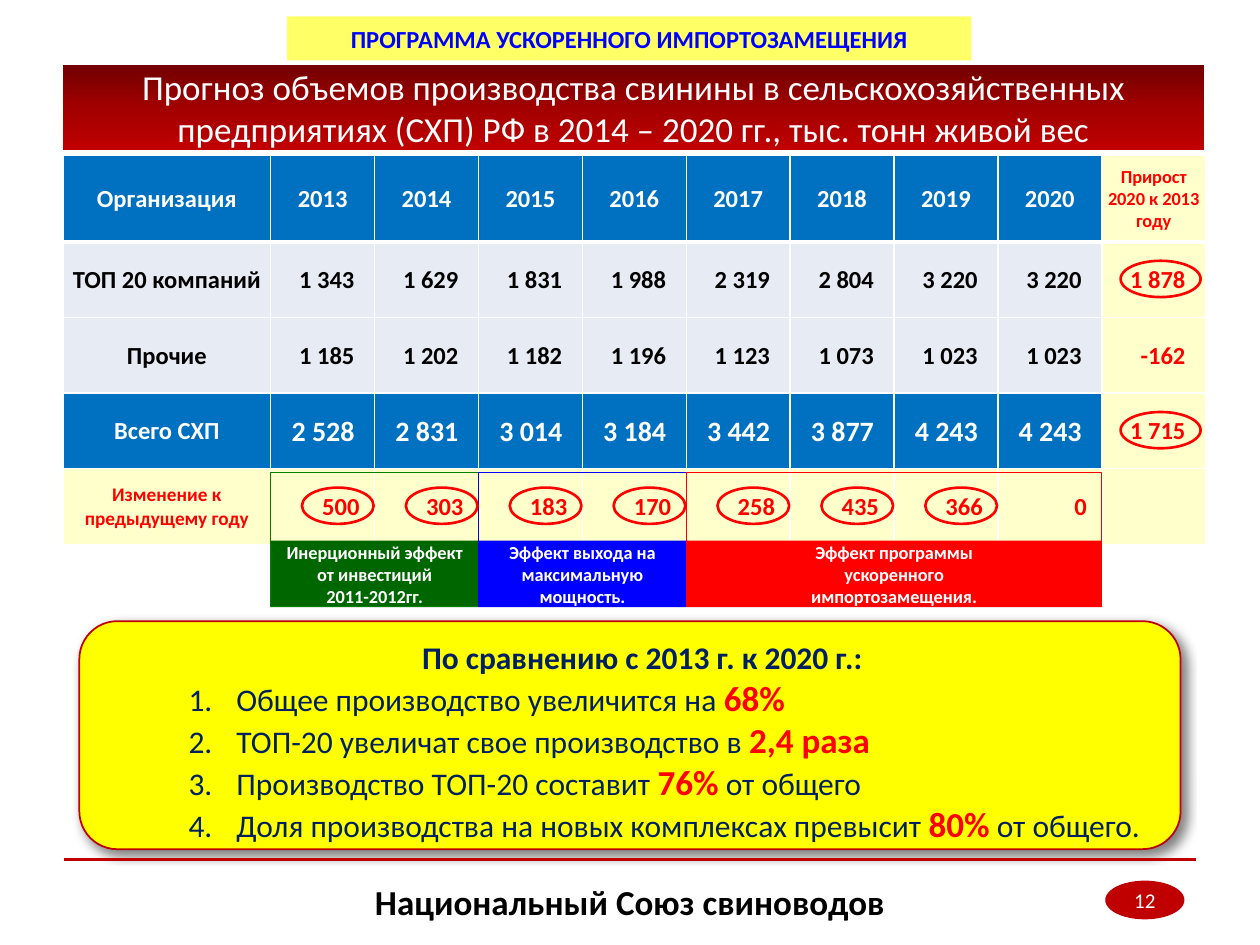
import copy
import dataclasses

import pptx
import pptx.dml.color
import pptx.enum.shapes
import pptx.enum.text
import pptx.oxml
import pptx.oxml.ns
import pptx.util

SLIDE_W, SLIDE_H = pptx.util.Inches(10), pptx.util.Inches(7.5)
SHAPE = pptx.enum.shapes.MSO_SHAPE
ALIGN = pptx.enum.text.PP_ALIGN
MIDDLE = pptx.enum.text.MSO_ANCHOR.MIDDLE
TOP = pptx.enum.text.MSO_ANCHOR.TOP
DRAWING_NS = pptx.oxml.ns.nsdecls("a")

WHITE, BLACK, RED, DARK_RED = "FFFFFF", "000000", "FF0000", "C00000"
BLUE, PALE_BLUE, CREAM, NAVY = "0070C0", "E7EBF4", "FFFFCC", "002060"

# The table grid: a label column of two units and nine columns of one unit.
COLUMN_UNITS = [2] + [1] * 9
ROW_UNITS = [1.15, 1, 1, 1, 1]
GRID_COLS, GRID_ROWS = sum(COLUMN_UNITS), sum(ROW_UNITS)

HEADER = ["Организация", "2013", "2014", "2015", "2016", "2017", "2018",
          "2019", "2020", "Прирост 2020 к 2013 году"]
VOLUMES = [
    ["ТОП 20 компаний", "1 343", "1 629", "1 831", "1 988", "2 319",
     "2 804", "3 220", "3 220", "1 878"],
    ["Прочие", "1 185", "1 202", "1 182", "1 196", "1 123",
     "1 073", "1 023", "1 023", "-162"],
    ["Всего СХП", "2 528", "2 831", "3 014", "3 184", "3 442",
     "3 877", "4 243", "4 243", "1 715"],
    ["Изменение к предыдущему году", "500", "303", "183", "170", "258",
     "435", "366", "0", ""],
]
# First grid column, width in columns, band colour, frame colour, label.
EFFECTS = [
    (2, 2, "006600", "008000", "Инерционный эффект\nот инвестиций\n2011-2012гг."),
    (4, 2, "0000FF", "0000FF", "Эффект выхода на максимальную мощность."),
    (6, 4, RED, RED, "Эффект программы\nускоренного\nимпортозамещения."),
]
CONCLUSIONS = [
    ("Общее производство увеличится на ", "68%", ""),
    ("ТОП-20 увеличат свое производство в ", "2,4 раза", ""),
    ("Производство ТОП-20 составит ", "76%", " от общего"),
    ("Доля производства на новых комплексах превысит ", "80%", " от общего."),
]


@dataclasses.dataclass
class Box:
    x: float
    y: float
    w: float
    h: float

    def inner(self, x, y, w, h, cols=1, rows=1):
        """Inner box measured in columns and rows of this one."""
        return Box(self.x + self.w * x / cols, self.y + self.h * y / rows,
                   self.w * w / cols, self.h * h / rows)

    def emu(self):
        return [round(v) for v in (self.x, self.y, self.w, self.h)]


def percent(x, y, w, h):
    return Box(0, 0, SLIDE_W, SLIDE_H).inner(x, y, w, h, 100, 100)


def color(hex_value):
    return pptx.dml.color.RGBColor.from_string(hex_value)


def paint(run, size, hex_value, bold=False):
    run.font.name = "Calibri"
    run.font.size = pptx.util.Pt(size)
    run.font.bold = bold
    run.font.color.rgb = color(hex_value)


def write(frame, text, size, hex_value, bold=False, align=ALIGN.CENTER):
    frame.text = text
    for paragraph in frame.paragraphs:
        paragraph.alignment = align
        for run in paragraph.runs:
            paint(run, size, hex_value, bold)


def add_shape(slide, kind, box, fill=None, line=None, width=1):
    shape = slide.shapes.add_shape(kind, *box.emu())
    shape.shadow.inherit = False
    if fill:
        shape.fill.solid()
        shape.fill.fore_color.rgb = color(fill)
    else:
        shape.fill.background()
    if line:
        shape.line.color.rgb = color(line)
        shape.line.width = pptx.util.Pt(width)
    else:
        shape.line.fill.background()
    shape.text_frame.word_wrap = True
    shape.text_frame.vertical_anchor = MIDDLE
    return shape


def clear_margins(frame):
    frame.margin_left = frame.margin_right = frame.margin_top = frame.margin_bottom = 0


def add_program_label(slide, box):
    label = add_shape(slide, SHAPE.RECTANGLE, box, "FFFF66")
    write(label.text_frame, "ПРОГРАММА УСКОРЕННОГО ИМПОРТОЗАМЕЩЕНИЯ", 14, "0000FF", True)


def add_title(slide, box):
    title = add_shape(slide, SHAPE.RECTANGLE, box)
    title.fill.gradient()
    title.fill.gradient_angle = 270
    first_stop = title._element.spPr.find(".//" + pptx.oxml.ns.qn("a:gs"))
    first_stop.addnext(copy.deepcopy(first_stop))
    for stop, position, shade in zip(title.fill.gradient_stops, (0, 0.5, 1),
                                     ("720000", "A20000", DARK_RED)):
        stop.position = position
        stop.color.rgb = color(shade)
    write(title.text_frame, "Прогноз объемов производства свинины в сельскохозяйственных "
          "предприятиях (СХП) РФ в 2014 – 2020 гг., тыс. тонн живой вес", 20, WHITE)


def set_borders(cell, bottom):
    properties = cell._tc.get_or_add_tcPr()
    for index, (side, points) in enumerate((("L", 1), ("R", 1), ("T", 1), ("B", bottom))):
        properties.insert(index, pptx.oxml.parse_xml(
            f'<a:ln{side} {DRAWING_NS} w="{pptx.util.Pt(points)}"><a:solidFill>'
            f'<a:srgbClr val="{WHITE}"/></a:solidFill></a:ln{side}>'))


def cell_style(row, col):
    """Fill, text colour and text size of a table cell."""
    if col == 9 or row == 4:
        size = 10.5 if row == 0 else 11 if col == 0 else 14
        return CREAM, RED, size
    if row in (0, 3):
        return BLUE, WHITE, 16 if row == 3 and col else 14
    return PALE_BLUE, BLACK, 14


def add_volume_table(slide, box):
    rows = [HEADER] + VOLUMES
    table = slide.shapes.add_table(len(rows), len(HEADER), *box.emu()).table
    table.first_row = table.horz_banding = False
    for column, units in zip(table.columns, COLUMN_UNITS):
        column.width = round(box.w * units / GRID_COLS)
    for r, (row, units) in enumerate(zip(rows, ROW_UNITS)):
        table.rows[r].height = round(box.h * units / GRID_ROWS)
        for c, text in enumerate(row):
            cell = table.cell(r, c)
            fill, ink, size = cell_style(r, c)
            is_number = r > 0 and c > 0
            cell.vertical_anchor = MIDDLE
            cell.margin_left = cell.margin_top = pptx.util.Inches(0.01)
            cell.margin_bottom = 0
            right = 0.01 if not is_number else 0.12 if r == 4 else 0.16
            cell.margin_right = pptx.util.Inches(right)
            cell.fill.solid()
            cell.fill.fore_color.rgb = color(fill)
            write(cell.text_frame, text, size, ink, True,
                  ALIGN.RIGHT if is_number else ALIGN.CENTER)
            set_borders(cell, 3 if r == 0 else 1)


def add_highlights(slide, box):
    """Red ovals round the main growth figures of the table."""
    spots = [(10.18, row, 0.77) for row in (1.15, 3.15)]
    spots += [(col + 0.3, 4.15, 0.69) for col in range(2, 9)]
    for x, y, width in spots:
        add_shape(slide, SHAPE.OVAL, box.inner(x, y + 0.25, width, 0.48, GRID_COLS, GRID_ROWS),
                  line=RED, width=1.5)


def add_effects(slide, box):
    """Coloured bands under the last row, each with a frame round its years."""
    for first, span, fill, edge, text in EFFECTS:
        band = add_shape(slide, SHAPE.RECTANGLE,
                         box.inner(first, 5.1, span, 0.88, GRID_COLS, GRID_ROWS), fill)
        clear_margins(band.text_frame)
        write(band.text_frame, text, 10.5, WHITE, True)
        add_shape(slide, SHAPE.RECTANGLE,
                  box.inner(first, 4.2, span, 1.77, GRID_COLS, GRID_ROWS), line=edge, width=0.75)


def set_indent(paragraph, left, first=0.0, numbered=False):
    properties = paragraph._p.get_or_add_pPr()
    properties.set("marL", str(pptx.util.Inches(left)))
    properties.set("indent", str(pptx.util.Inches(first)))
    if numbered:
        properties.append(pptx.oxml.parse_xml(
            f'<a:buFont {DRAWING_NS} typeface="+mj-lt"/>'))
        properties.append(pptx.oxml.parse_xml(
            f'<a:buAutoNum {DRAWING_NS} type="arabicPeriod"/>'))


def add_conclusions(slide, box):
    panel = add_shape(slide, SHAPE.ROUNDED_RECTANGLE, box, "FFFF00", DARK_RED)
    effects = panel._element.spPr.find(pptx.oxml.ns.qn("a:effectLst"))
    effects.append(pptx.oxml.parse_xml(
        f'<a:outerShdw {DRAWING_NS} blurRad="{pptx.util.Pt(6)}" dist="{pptx.util.Pt(4)}" '
        f'dir="{48 * 60000}" algn="tl" rotWithShape="0"><a:srgbClr val="808080"/></a:outerShdw>'))
    frame = panel.text_frame
    frame.vertical_anchor = TOP
    write(frame, "По сравнению с 2013 г. к 2020 г.:", 18, NAVY, True)
    set_indent(frame.paragraphs[0], 0.2)
    for before, figure, after in CONCLUSIONS:
        paragraph = frame.add_paragraph()
        paragraph.alignment = ALIGN.LEFT
        set_indent(paragraph, 1.06, -0.38, numbered=True)
        for text, style in ((before, (18, NAVY)), (figure, (20, RED, True)), (after, (18, NAVY))):
            if text:
                run = paragraph.add_run()
                run.text = text
                paint(run, *style)


def add_footer(slide, box):
    x, y, w, _ = box.emu()
    rule = slide.shapes.add_connector(pptx.enum.shapes.MSO_CONNECTOR.STRAIGHT, x, y, x + w, y)
    rule.line.color.rgb = color(DARK_RED)
    rule.line.width = pptx.util.Pt(1.5)
    rule._element.spPr.append(pptx.oxml.parse_xml(f"<a:effectLst {DRAWING_NS}/>"))
    union = slide.shapes.add_textbox(*box.inner(0.15, 0.25, 0.7, 0.75).emu()).text_frame
    union.word_wrap = True
    union.vertical_anchor = MIDDLE
    write(union, "Национальный Союз свиноводов", 20, BLACK, True)
    page = add_shape(slide, SHAPE.OVAL, box.inner(0.92, 0.32, 0.07, 0.58), DARK_RED)
    clear_margins(page.text_frame)
    write(page.text_frame, "12", 12, WHITE)


def main():
    deck = pptx.Presentation()
    deck.slide_width, deck.slide_height = SLIDE_W, SLIDE_H
    slide = deck.slides.add_slide(deck.slide_layouts[6])
    table_box = percent(5, 16.4, 90.7, 41.2)
    add_title(slide, percent(5, 6.93, 90.6, 8.93))
    add_program_label(slide, percent(22.8, 1.73, 54.3, 4.67))
    add_volume_table(slide, table_box)
    add_conclusions(slide, percent(6.3, 65.73, 87.4, 24.13))
    add_effects(slide, table_box)
    add_highlights(slide, table_box)
    add_footer(slide, percent(5.1, 90.93, 89.8, 7.07))
    deck.save("out.pptx")


if __name__ == "__main__":
    main()
